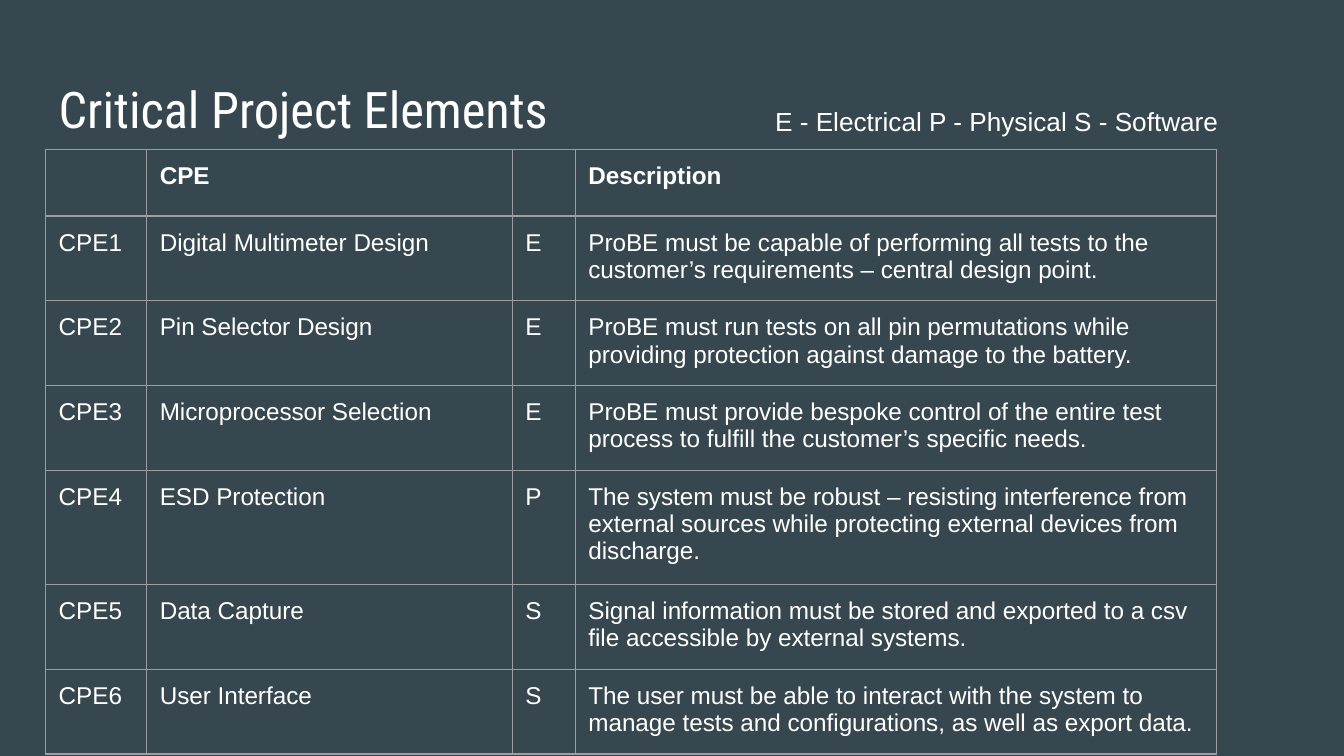
from lxml.etree import SubElement
from pptx import Presentation
from pptx.dml.color import RGBColor
from pptx.enum.text import MSO_ANCHOR
from pptx.oxml.ns import qn
from pptx.util import Cm, Pt

COLORS = {"background": "37474F", "text": "FFFFFF", "border": "9E9E9E"}
INSET = Cm(0.25)
COLUMN_WIDTHS = [1.91, 6.91, 1.19, 12.12]
HEADER_HEIGHT, TWO_LINE_HEIGHT, THREE_LINE_HEIGHT = 1.22, 1.6, 2.13
ROW_HEIGHTS = [HEADER_HEIGHT, *[TWO_LINE_HEIGHT] * 3, THREE_LINE_HEIGHT,
               *[TWO_LINE_HEIGHT] * 2]

HEADER = ("", "CPE", "", "Description")
ELEMENTS = [
    ("Digital Multimeter Design", "E",
     "ProBE must be capable of performing all tests to the customer’s "
     "requirements – central design point."),
    ("Pin Selector Design", "E",
     "ProBE must run tests on all pin permutations while providing "
     "protection against damage to the battery."),
    ("Microprocessor Selection", "E",
     "ProBE must provide bespoke control of the entire test process to "
     "fulfill the customer’s specific needs."),
    ("ESD Protection", "P",
     "The system must be robust – resisting interference from external "
     "sources while protecting external devices from discharge."),
    ("Data Capture", "S",
     "Signal information must be stored and exported to a csv file "
     "accessible by external systems."),
    ("User Interface", "S",
     "The user must be able to interact with the system to manage tests "
     "and configurations, as well as export data."),
]


def write(frame, text, size=13, font="Arial", color="text", bold=False):
    span = frame.paragraphs[0].add_run()
    span.text = text
    span.font.size = Pt(size)
    span.font.name = font
    span.font.bold = bold
    span.font.color.rgb = RGBColor.from_string(COLORS[color])


def set_insets(holder):
    """Give a text frame or table cell the same margin on all sides."""
    holder.margin_left = holder.margin_right = INSET
    holder.margin_top = holder.margin_bottom = INSET


class SlideBuilder:
    def __init__(self, slide):
        self.slide = slide

    def background(self):
        fill = self.slide.background.fill
        fill.solid()
        fill.fore_color.rgb = RGBColor.from_string(COLORS["background"])

    def text(self, left, top, width, height, text, **style):
        box = self.slide.shapes.add_textbox(
            Cm(left), Cm(top), Cm(width), Cm(height))
        frame = box.text_frame
        frame.word_wrap = True
        frame.vertical_anchor = MSO_ANCHOR.MIDDLE
        set_insets(frame)
        write(frame, text, **style)

    def border(self, cell):
        properties = cell._tc.get_or_add_tcPr()
        for index, side in enumerate(("a:lnL", "a:lnR", "a:lnT", "a:lnB")):
            line = SubElement(properties, qn(side), w=str(Pt(0.75)))
            fill = SubElement(line, qn("a:solidFill"))
            SubElement(fill, qn("a:srgbClr"), val=COLORS["border"])
            # Borders must come before the cell's fill.
            properties.insert(index, line)

    def table(self, left, top, rows):
        table = self.slide.shapes.add_table(
            len(rows), len(COLUMN_WIDTHS), Cm(left), Cm(top),
            Cm(sum(COLUMN_WIDTHS)), Cm(sum(ROW_HEIGHTS))).table
        table.horz_banding = False
        for column, width in zip(table.columns, COLUMN_WIDTHS):
            column.width = Cm(width)
        for number, (row, height) in enumerate(zip(table.rows, ROW_HEIGHTS)):
            row.height = Cm(height)
            for cell, text in zip(row.cells, rows[number]):
                cell.fill.background()
                set_insets(cell)
                self.border(cell)
                if text:
                    write(cell.text_frame, text, bold=number == 0)


def main():
    deck = Presentation()
    deck.slide_width, deck.slide_height = Cm(25.4), Cm(14.29)
    builder = SlideBuilder(deck.slides.add_slide(deck.slide_layouts[6]))
    builder.background()
    builder.text(0.86, 1.24, 23.67, 1.6, "Critical Project Elements",
                 size=27, font="Roboto Condensed")
    rows = [(f"CPE{number}", *element)
            for number, element in enumerate(ELEMENTS, start=1)]
    builder.table(0.86, 2.82, [HEADER, *rows])
    builder.text(14.4, 1.73, 9.68, 1.12,
                 "E - Electrical P - Physical S - Software", size=14)
    deck.save("out.pptx")


if __name__ == "__main__":
    main()
